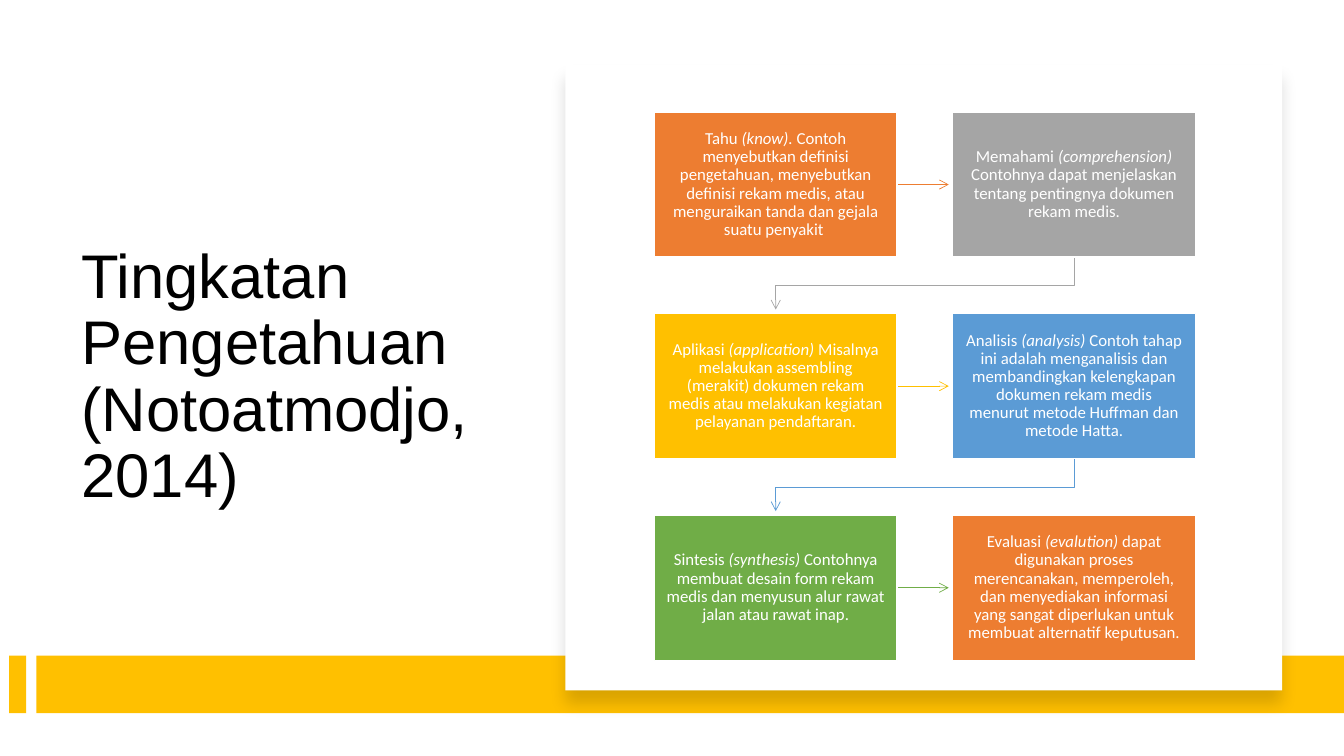
import dataclasses
import pptx
import pptx.util
import pptx.dml.color
import pptx.enum.shapes
import pptx.enum.text
import pptx.oxml
import pptx.oxml.ns

Cm = pptx.util.Cm
Pt = pptx.util.Pt
NS = pptx.oxml.ns.nsdecls("a")


@dataclasses.dataclass(frozen=True)
class Theme:
    """Colours, fonts and type sizes."""
    white: str = "FFFFFF"
    black: str = "000000"
    orange: str = "ED7D31"
    grey: str = "A5A5A5"
    gold: str = "FFC000"
    blue: str = "5B9BD5"
    green: str = "70AD47"
    head: str = "Arial"
    body: str = "Calibri"
    big: float = 44
    small: float = 12
    lead: float = 0.9


THEME = Theme()
STEPS = [
    (THEME.orange, "Tahu ", "(know).",
     " Contoh menyebutkan definisi pengetahuan, menyebutkan definisi rekam "
     "medis, atau menguraikan tanda dan gejala suatu penyakit "),
    (THEME.grey, "Memahami ", "(comprehension) ",
     "Contohnya dapat menjelaskan tentang pentingnya dokumen rekam medis."),
    (THEME.gold, "Aplikasi ", "(application)",
     " Misalnya melakukan assembling (merakit) dokumen rekam medis atau "
     "melakukan kegiatan pelayanan pendaftaran."),
    (THEME.blue, "Analisis ", "(analysis)",
     " Contoh tahap ini adalah menganalisis dan membandingkan kelengkapan "
     "dokumen rekam medis menurut metode Huffman dan metode Hatta."),
    (THEME.green, "Sintesis ", "(synthesis)",
     " Contohnya membuat desain form rekam medis dan menyusun alur rawat "
     "jalan atau rawat inap."),
    (THEME.orange, "Evaluasi ", "(evalution)",
     " dapat digunakan proses merencanakan, memperoleh, dan menyediakan "
     "informasi yang sangat diperlukan untuk membuat alternatif keputusan."),
]


def rgb(code):
    """Turn a hex code into a colour."""
    return pptx.dml.color.RGBColor.from_string(code)


def block(slide, left, top, width, height, fill):
    """Add a plain filled rectangle."""
    shape = slide.shapes.add_shape(
        pptx.enum.shapes.MSO_SHAPE.RECTANGLE,
        Cm(left), Cm(top), Cm(width), Cm(height))
    shape.shadow.inherit = False
    shape.fill.solid()
    shape.fill.fore_color.rgb = rgb(fill)
    shape.line.fill.background()
    return shape


def style(run, face, size, color):
    """Set the font of a run."""
    run.font.name = face
    run.font.size = Pt(size)
    run.font.color.rgb = rgb(color)


def title(slide, left, top, width, height):
    """Place the heading in its box."""
    box = slide.shapes.add_textbox(Cm(left), Cm(top), Cm(width), Cm(height))
    frame = box.text_frame
    frame.word_wrap = True
    frame.vertical_anchor = pptx.enum.text.MSO_ANCHOR.MIDDLE
    frame.text = "Tingkatan Pengetahuan (Notoatmodjo, 2014)"
    para = frame.paragraphs[0]
    para.line_spacing = THEME.lead
    style(para.runs[0], THEME.head, THEME.big, THEME.black)


def band(slide, left, top, width, height):
    """Place the short and the long bar of the footer."""
    tab, gap = 0.43, 0.26
    block(slide, left, top, tab, height, THEME.gold)
    start = tab + gap
    block(slide, left + start, top, width - start, height, THEME.gold)


def panel(slide, left, top, width, height):
    """Place the white card with its soft shadow."""
    card = block(slide, left, top, width, height, THEME.white)
    glow = pptx.oxml.parse_xml(
        f'<a:outerShdw {NS} blurRad="{Pt(11)}" dist="{Pt(10)}" dir="5400000" '
        f'algn="t" rotWithShape="0"><a:srgbClr val="{THEME.black}">'
        '<a:alpha val="15000"/></a:srgbClr></a:outerShdw>')
    card._element.spPr.find(pptx.oxml.ns.qn("a:effectLst")).append(glow)


def arrow(slide, points, color):
    """Draw a thin arrow, straight or bent, through the points."""
    spots = [(Cm(x), Cm(y)) for x, y in points]
    if len(spots) == 2:
        line = slide.shapes.add_connector(
            pptx.enum.shapes.MSO_CONNECTOR.STRAIGHT, *spots[0], *spots[1])
        line._element.spPr.append(pptx.oxml.parse_xml(f"<a:effectLst {NS}/>"))
    else:
        path = slide.shapes.build_freeform(*spots[0])
        path.add_line_segments(spots[1:], close=False)
        line = path.convert_to_shape()
        line.fill.background()
        line.shadow.inherit = False
    line.line.color.rgb = rgb(color)
    line.line.width = Pt(0.5)
    line.line._get_or_add_ln().append(
        pptx.oxml.parse_xml(f'<a:tailEnd {NS} type="arrow"/>'))


def step(slide, left, top, width, height, item):
    """Place one coloured step with its text."""
    fill, *parts = item
    shape = block(slide, left, top, width, height, fill)
    shape.line.color.rgb = rgb(THEME.white)
    shape.line.width = Pt(1)
    frame = shape.text_frame
    frame.word_wrap = True
    frame.vertical_anchor = pptx.enum.text.MSO_ANCHOR.MIDDLE
    frame.margin_left = frame.margin_right = Cm(0.3)
    frame.margin_top = frame.margin_bottom = Cm(0.3)
    para = frame.paragraphs[0]
    para.alignment = pptx.enum.text.PP_ALIGN.CENTER
    para.line_spacing = THEME.lead
    para.space_after = Pt(4.2)
    for spot, part in enumerate(parts):
        run = para.add_run()
        run.text = part
        style(run, THEME.body, THEME.small, THEME.white)
        run.font.italic = spot == 1


def flow(slide, left, top, width, height):
    """Place the steps in two columns and join them in order."""
    wide, tall, slack = 6.12, 3.66, 0.1
    across, down = width - wide, (height - tall) / 2
    cells = [(left + n % 2 * across, top + n // 2 * down)
             for n in range(len(STEPS))]
    for n, ((x, y), (nx, ny)) in enumerate(zip(cells, cells[1:])):
        if n % 2 == 0:
            mid = y + tall / 2
            points = [(x + wide, mid), (nx - slack, mid)]
        else:
            start, end = x + wide / 2, nx + wide / 2
            bend = (y + tall + ny) / 2
            points = [(start, y + tall), (start, bend),
                      (end, bend), (end, ny - slack)]
        arrow(slide, points, STEPS[n][0])
    for (x, y), item in zip(cells, STEPS):
        step(slide, x, y, wide, tall, item)


def main():
    """Build and save the slide."""
    deck = pptx.Presentation()
    deck.slide_width, deck.slide_height = Cm(33.87), Cm(19.05)
    slide = deck.slides.add_slide(deck.slide_layouts[6])
    title(slide, 1.8, 3.05, 10.54, 12.95)
    band(slide, 0.23, 16.52, 33.64, 1.45)
    panel(slide, 14.25, 1.63, 18.06, 15.77)
    flow(slide, 16.49, 2.82, 13.64, 13.82)
    deck.save("out.pptx")


if __name__ == "__main__":
    main()
